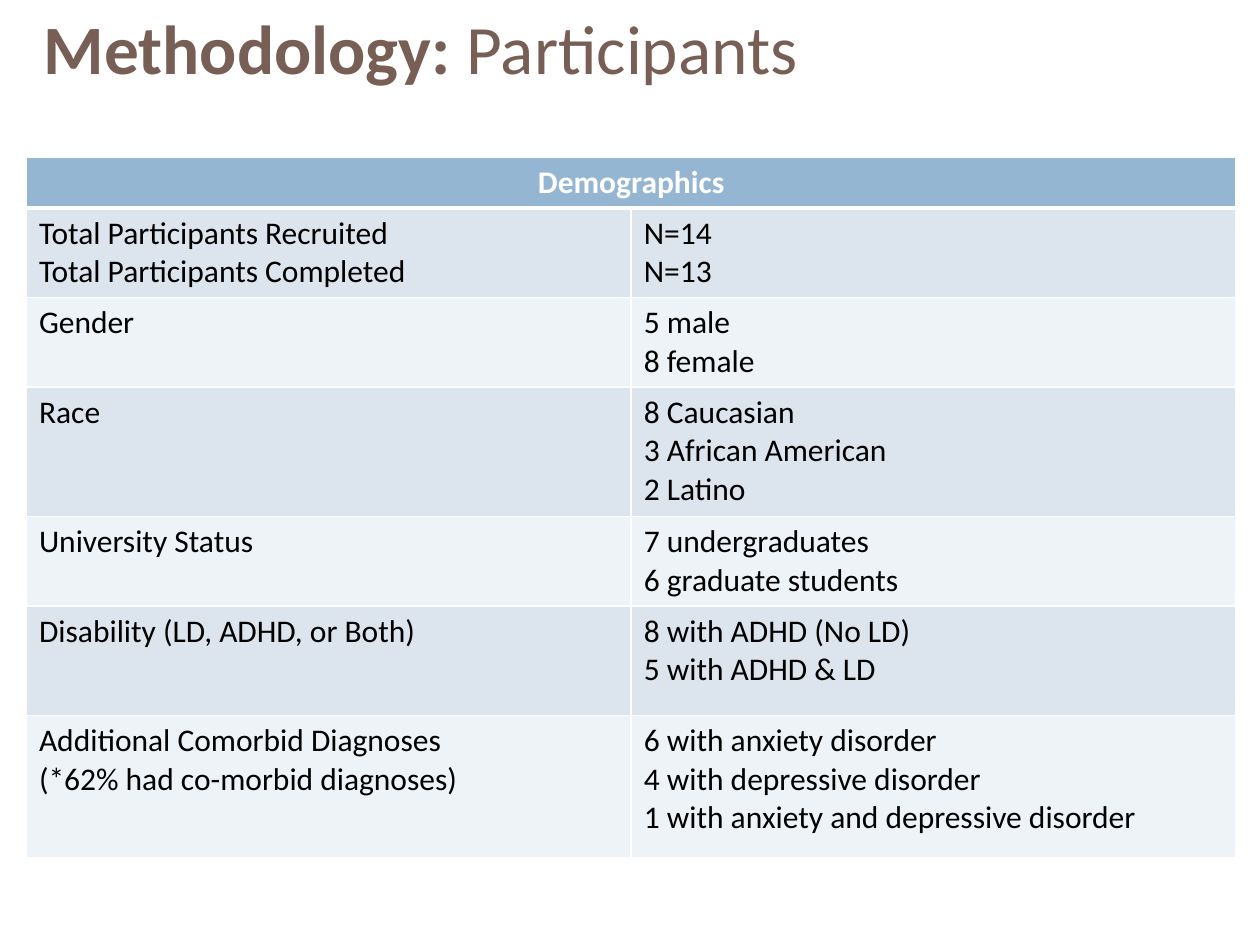
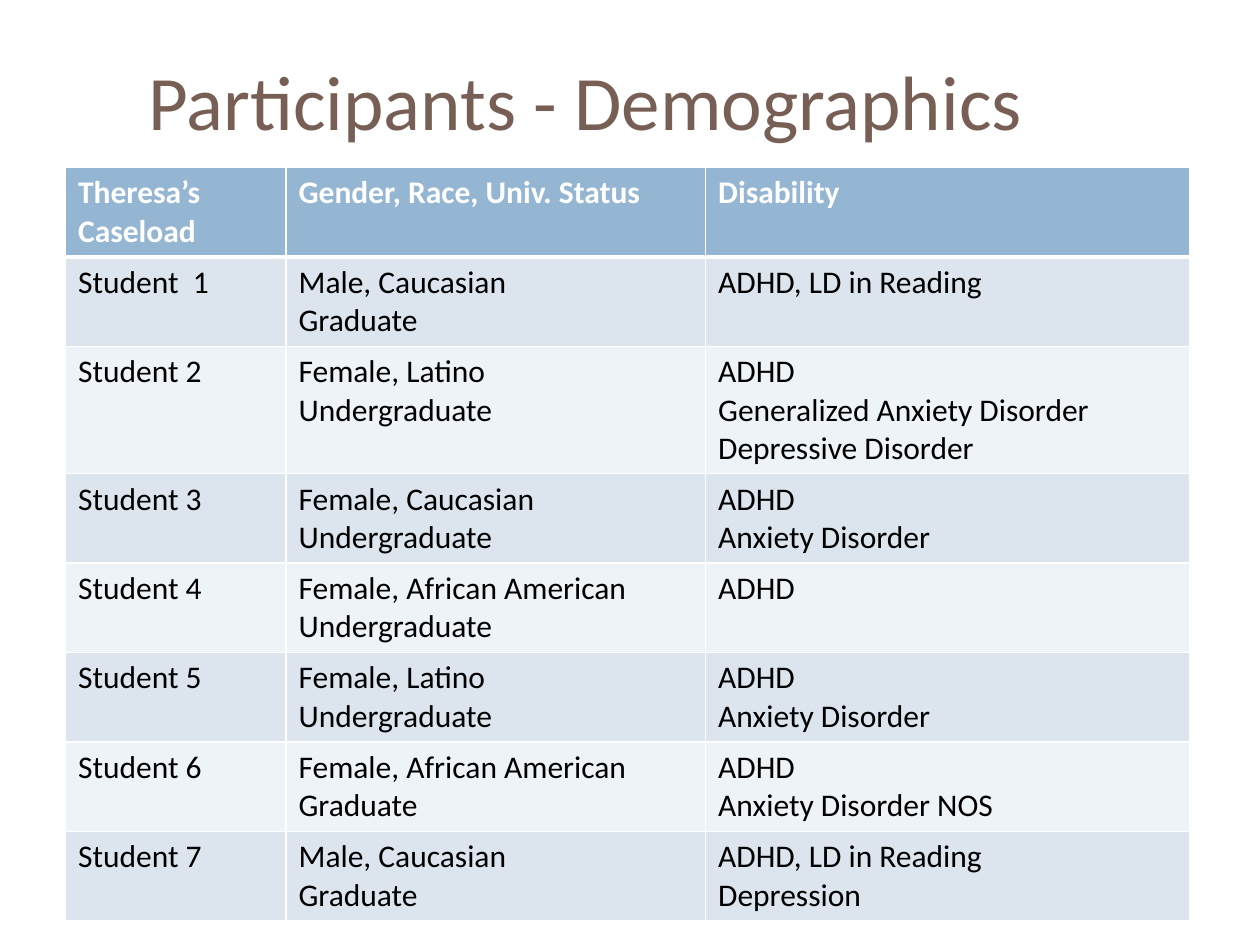
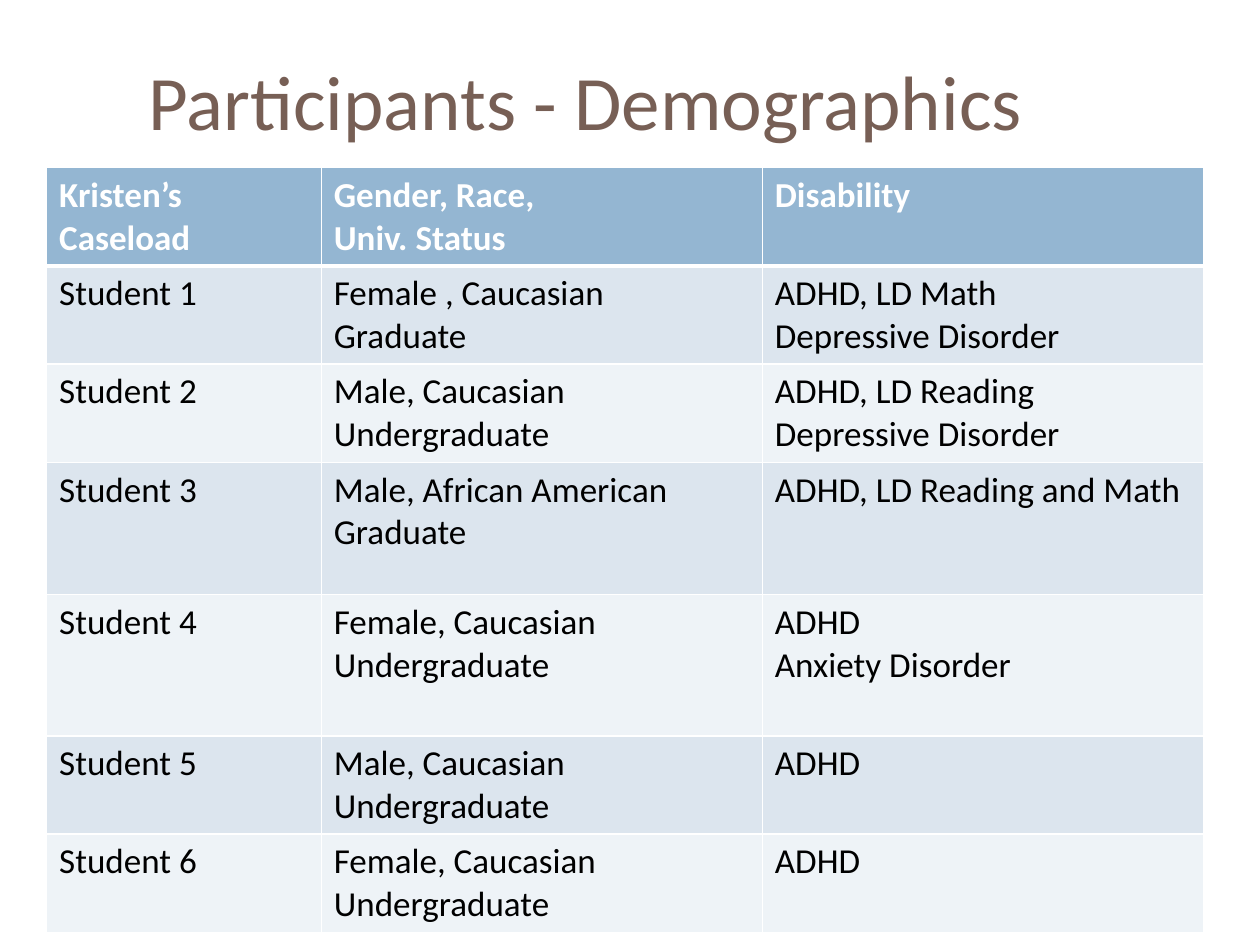
from lxml import etree
from pptx import Presentation
from pptx import util as u
from pptx.dml.color import RGBColor
from pptx.enum import text as t
from pptx.oxml.ns import qn

# Shared style
FONT = "Calibri"
BROWN = RGBColor(0x77, 0x5F, 0x55)
BLUE = RGBColor(0x94, 0xB6, 0xD2)
BANDS = (RGBColor(0xDC, 0xE5, 0xEE), RGBColor(0xEE, 0xF3, 0xF7))
WHITE = RGBColor(0xFF, 0xFF, 0xFF)
BLACK = RGBColor(0, 0, 0)


def write(par, words, size=18, color=BLACK, bold=False):
    """Add one formatted run to a paragraph."""
    run = par.add_run()
    run.text = words
    font = run.font
    font.name, font.size, font.bold = FONT, u.Pt(size), bold
    font.color.rgb = color


def edge(cell, side, width):
    """Draw a white border on one side (L, R, T or B) of a cell."""
    line = etree.SubElement(cell._tc.get_or_add_tcPr(), qn(f"a:ln{side}"),
                            w=str(u.Pt(width)))
    fill = etree.SubElement(line, qn("a:solidFill"))
    etree.SubElement(fill, qn("a:srgbClr"), val=str(WHITE))


class Deck:
    def __init__(self):
        self.prs = Presentation()
        self.prs.slide_width = u.Inches(10)
        self.prs.slide_height = u.Inches(7.5)
        self.slide = None

    def page(self):
        self.slide = self.prs.slides.add_slide(self.prs.slide_layouts[6])

    def title(self, parts, left=1.08, top=0.25, high=1.08, size=44):
        """Write a title from (words, bold) pairs."""
        box = self.slide.shapes.add_textbox(
            u.Inches(left), u.Inches(top), u.Inches(8.92), u.Inches(high))
        frame = box.text_frame
        frame.word_wrap = True
        frame.margin_top = frame.margin_bottom = 0
        frame.vertical_anchor = t.MSO_ANCHOR.MIDDLE
        for words, bold in parts:
            write(frame.paragraphs[0], words, size=size, color=BROWN, bold=bold)

    def table(self, left, top, cols, highs, rows, size=18):
        """Draw a banded table; a short first row spans all columns."""
        grid = self.slide.shapes.add_table(
            len(rows), len(cols), u.Inches(left), u.Inches(top),
            u.Inches(sum(cols)), u.Inches(sum(highs))).table
        for col, wide in zip(grid.columns, cols):
            col.width = u.Inches(wide)
        for row, high in zip(grid.rows, highs):
            row.height = u.Inches(high)
        for r, row in enumerate(rows):
            for c in range(len(cols)):
                self.cell(grid.cell(r, c), r, row[c] if c < len(row) else "", size)
        if len(rows[0]) == 1:
            head = grid.cell(0, 0)
            head.merge(grid.cell(0, len(cols) - 1))
            head.text_frame.paragraphs[0].alignment = t.PP_ALIGN.CENTER

    def cell(self, cell, r, words, size):
        head = r == 0
        widths = {"L": 1, "R": 1, "T": 3 if r == 1 else 1, "B": 3 if head else 1}
        for side, width in widths.items():
            edge(cell, side, width)
        cell.fill.solid()
        cell.fill.fore_color.rgb = BLUE if head else BANDS[(r - 1) % 2]
        frame = cell.text_frame
        for i, line in enumerate(words.splitlines()):
            par = frame.add_paragraph() if i else frame.paragraphs[0]
            write(par, line, size=size, color=WHITE if head else BLACK, bold=head)


def main():
    deck = Deck()

    # Summary of all participants
    deck.page()
    deck.title([("Methodology: ", True), ("Participants", False)],
               left=0.25, top=0.04, high=0.67, size=39.6)
    deck.table(0.21, 1.25, [4.8, 4.8], [0.4, 0.71, 0.71, 1.03, 0.71, 0.87, 1.13], [
        ["Demographics"],
        ["Total Participants Recruited\nTotal Participants Completed", "N=14\nN=13"],
        ["Gender", "5 male\n8 female"],
        ["Race", "8 Caucasian\n3 African American\n2 Latino"],
        ["University Status", "7 undergraduates\n6 graduate students"],
        ["Disability (LD, ADHD, or Both)", "8 with ADHD (No LD)\n5 with ADHD & LD"],
        ["Additional Comorbid Diagnoses\n(*62% had co-morbid diagnoses)",
         "6 with anxiety disorder\n4 with depressive disorder\n"
         "1 with anxiety and depressive disorder"],
    ])

    # First caseload
    people = [("Participants - Demographics", False)]
    deck.page()
    deck.title(people)
    deck.table(0.52, 1.33, [1.75, 3.33, 3.84], [0.71, 0.71, 1.01] + [0.71] * 5, [
        ["Theresa’s Caseload", "Gender, Race, Univ. Status", "Disability"],
        ["Student  1", "Male, Caucasian\nGraduate", "ADHD, LD in Reading"],
        ["Student 2", "Female, Latino\nUndergraduate",
         "ADHD\nGeneralized Anxiety Disorder\nDepressive Disorder"],
        ["Student 3", "Female, Caucasian\nUndergraduate", "ADHD\nAnxiety Disorder"],
        ["Student 4", "Female, African American\nUndergraduate", "ADHD"],
        ["Student 5", "Female, Latino\nUndergraduate", "ADHD\nAnxiety Disorder"],
        ["Student 6", "Female, African American\nGraduate",
         "ADHD\nAnxiety Disorder NOS"],
        ["Student 7", "Male, Caucasian\nGraduate", "ADHD, LD in Reading\nDepression"],
    ])

    # Second caseload
    deck.page()
    deck.title(people)
    deck.table(0.37, 1.33, [2.18, 3.5, 3.5],
               [0.78] * 3 + [1.05, 1.12] + [0.78] * 2, [
        ["Kristen’s Caseload", "Gender, Race,\nUniv. Status", "Disability"],
        ["Student 1", "Female , Caucasian\nGraduate",
         "ADHD, LD Math\nDepressive Disorder"],
        ["Student 2", "Male, Caucasian\nUndergraduate",
         "ADHD, LD Reading\nDepressive Disorder"],
        ["Student 3", "Male, African American\nGraduate", "ADHD, LD Reading and Math"],
        ["Student 4", "Female, Caucasian\nUndergraduate", "ADHD\nAnxiety Disorder"],
        ["Student 5", "Male, Caucasian\nUndergraduate", "ADHD"],
        ["Student 6", "Female, Caucasian\nUndergraduate", "ADHD"],
    ], size=20)

    deck.prs.save("out.pptx")


if __name__ == "__main__":
    main()
